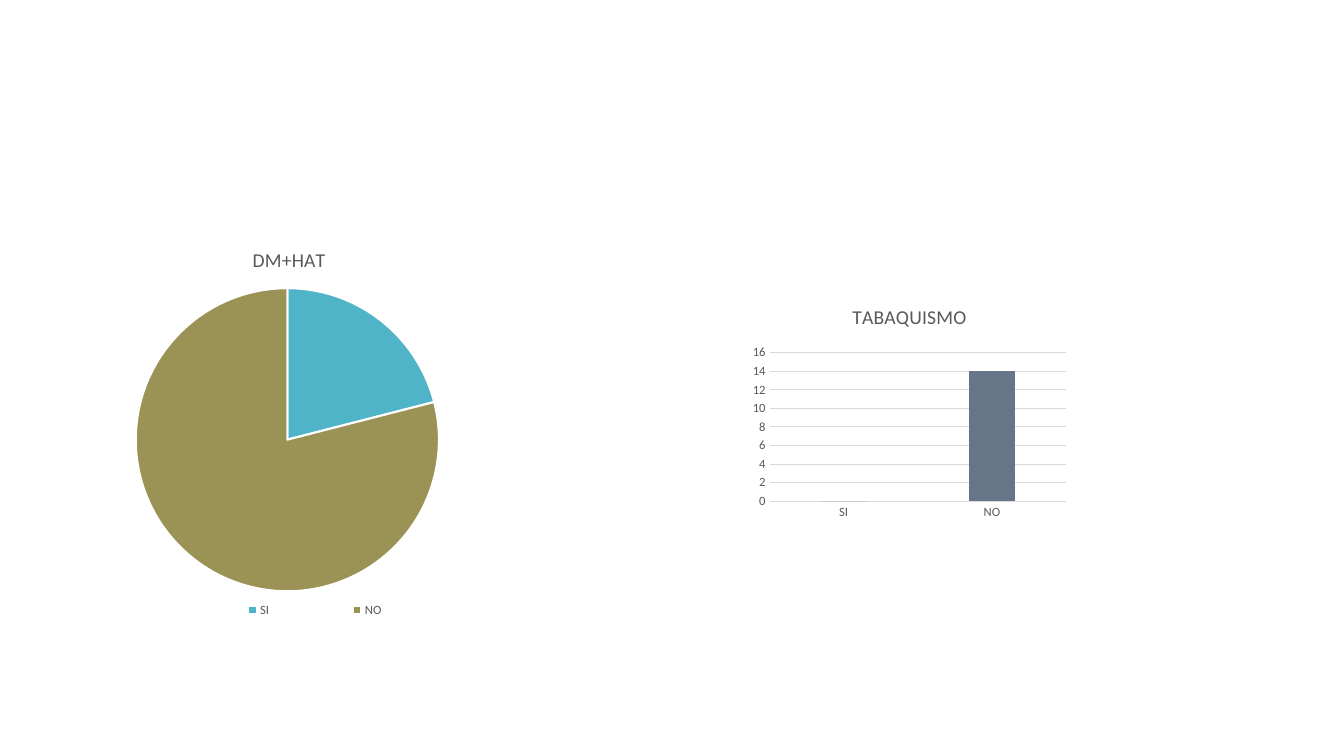
import pptx
import pptx.chart.data
import pptx.dml.color
import pptx.enum.chart
import pptx.oxml
import pptx.oxml.ns
import pptx.util

KIND = pptx.enum.chart.XL_CHART_TYPE
WIDE, HIGH = 13.33, 7.5
FONT, GREY, RULE = "Calibri", "595959", "D9D9D9"
CATS = ["SI", "NO"]

# "at" is in shares of the slide, "parts" in shares of the chart
CHARTS = [
    {"kind": KIND.PIE, "title": "DM+HAT", "vals": [21, 79],
     "fills": ["50B4C8", "9B9256"],
     "at": (0.74 / WIDE, 2.2 / HIGH, 4.22 / WIDE, 4.12 / HIGH),
     "parts": {"title": (0.41, 0.05), "plotArea": (0.14, 0.16, 0.72, 0.73),
               "legend": (0.22, 0.9, 0.69, 0.07)}},
    {"kind": KIND.COLUMN_CLUSTERED, "title": "TABAQUISMO", "vals": [0, 14],
     "fills": ["657689"],
     "at": (7.29 / WIDE, 2.79 / HIGH, 3.42 / WIDE, 2.63 / HIGH),
     "parts": {"title": (0.33, 0.07), "plotArea": (0.1, 0.27, 0.86, 0.56)}},
]


def color(code):
    return pptx.dml.color.RGBColor.from_string(code)


def style(font, size):
    look = {"name": FONT, "size": pptx.util.Pt(size), "bold": False}
    for key, val in look.items():
        setattr(font, key, val)
    font.color.rgb = color(GREY)


def fill(format, code):
    format.fill.solid()
    format.fill.fore_color.rgb = color(code)


def rule(format, code, width):
    format.line.color.rgb = color(code)
    format.line.width = pptx.util.Pt(width)


def place(chart, part, spots):
    """Fix a chart part by its left, top, width and height shares."""
    node = chart._chartSpace.xpath(f"c:chart/c:{part}")[0]
    for old in node.xpath("c:layout"):
        node.remove(old)
    target = '<c:layoutTarget val="inner"/>' if part == "plotArea" else ""
    modes = "".join(f'<c:{k}Mode val="edge"/>' for k in "xy")
    sizes = "".join(f'<c:{k} val="{v}"/>' for k, v in zip("xywh", spots))
    layout = pptx.oxml.parse_xml(
        f"<c:layout {pptx.oxml.ns.nsdecls('c')}><c:manualLayout>"
        f"{target}{modes}{sizes}</c:manualLayout></c:layout>")
    node.insert(0 if part == "plotArea" else 1, layout)


def dress_pie(chart, fills):
    chart.has_legend = True
    chart.legend.position = pptx.enum.chart.XL_LEGEND_POSITION.BOTTOM
    chart.legend.include_in_layout = False
    style(chart.legend.font, 9)
    for i, code in enumerate(fills):
        slice = chart.plots[0].series[0].points[i].format
        fill(slice, code)
        rule(slice, "FFFFFF", 1.5)


def dress_bars(chart, fills):
    chart.has_legend = False
    plot = chart.plots[0]
    plot.gap_width, plot.overlap = 219, -27
    fill(plot.series[0].format, fills[0])
    for axis in (chart.category_axis, chart.value_axis):
        axis.major_tick_mark = pptx.enum.chart.XL_TICK_MARK.NONE
        style(axis.tick_labels.font, 9)
    rule(chart.category_axis.format, RULE, 0.75)
    chart.value_axis.format.line.fill.background()
    rule(chart.value_axis.major_gridlines.format, RULE, 0.75)


def draw(slide, item):
    data = pptx.chart.data.CategoryChartData()
    data.categories = CATS
    data.add_series("Series 1", item["vals"])
    box = [pptx.util.Inches(s * full)
           for s, full in zip(item["at"], (WIDE, HIGH) * 2)]
    chart = slide.shapes.add_chart(item["kind"], *box, data).chart
    style(chart.font, 10)
    chart.has_title = True
    chart.chart_title.include_in_layout = False
    text = chart.chart_title.text_frame
    text.text = item["title"]
    style(text.paragraphs[0].runs[0].font, 14)
    pie = item["kind"] == KIND.PIE
    chart.plots[0].vary_by_categories = pie
    (dress_pie if pie else dress_bars)(chart, item["fills"])
    for part, spots in item["parts"].items():
        place(chart, part, spots)


def main():
    deck = pptx.Presentation()
    deck.slide_width = pptx.util.Inches(WIDE)
    deck.slide_height = pptx.util.Inches(HIGH)
    slide = deck.slides.add_slide(deck.slide_layouts[6])
    for item in CHARTS:
        draw(slide, item)
    deck.save("out.pptx")


if __name__ == "__main__":
    main()
